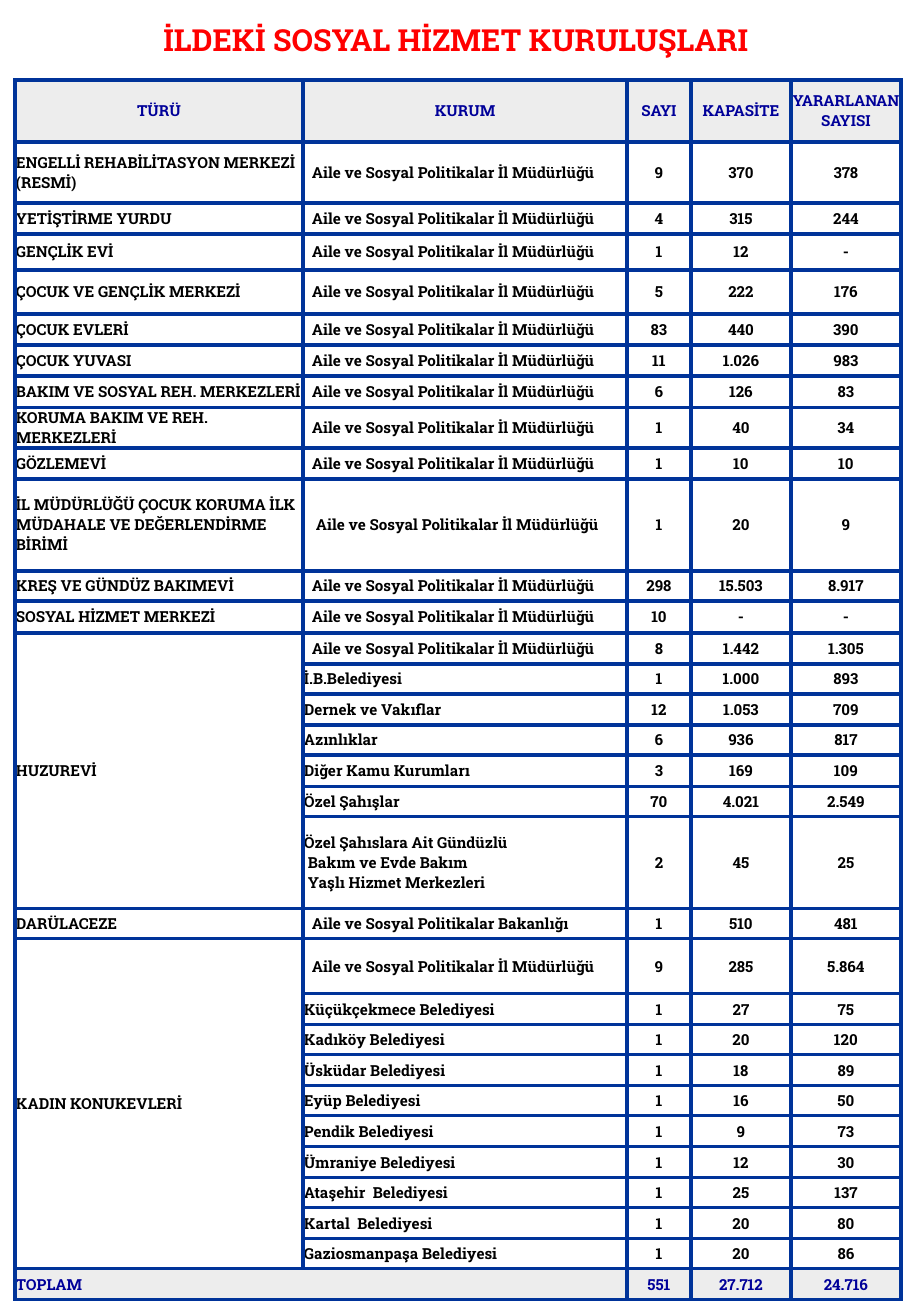
from lxml.etree import SubElement
from pptx import Presentation
from pptx.dml.color import RGBColor
from pptx.enum.text import MSO_ANCHOR, MSO_AUTO_SIZE, PP_ALIGN
from pptx.oxml.ns import qn
from pptx.util import Emu, Pt

PX = 7526  # EMU in one px
FONT = "Roboto Slab"
COLORS = {"title": "FF0000", "head": "000099", "text": "000000",
          "line": "003399", "band": "EDEDED", "paper": "FFFFFF"}
AGENCY = "Aile ve Sosyal Politikalar İl Müdürlüğü"
MINISTRY = "Aile ve Sosyal Politikalar Bakanlığı"

HEAD = ["TÜRÜ", "KURUM", "SAYI", "KAPASİTE", "YARARLANAN\nSAYISI"]
TOTAL = ["TOPLAM", "", "551", "27.712", "24.716"]
GROUPS = [
    ("ENGELLİ REHABİLİTASYON MERKEZİ (RESMİ)", [(AGENCY, "9", "370", "378")]),
    ("YETİŞTİRME YURDU", [(AGENCY, "4", "315", "244")]),
    ("GENÇLİK EVİ", [(AGENCY, "1", "12", "-")]),
    ("ÇOCUK VE GENÇLİK MERKEZİ", [(AGENCY, "5", "222", "176")]),
    ("ÇOCUK EVLERİ", [(AGENCY, "83", "440", "390")]),
    ("ÇOCUK YUVASI", [(AGENCY, "11", "1.026", "983")]),
    ("BAKIM VE SOSYAL REH. MERKEZLERİ", [(AGENCY, "6", "126", "83")]),
    ("KORUMA BAKIM VE REH. MERKEZLERİ", [(AGENCY, "1", "40", "34")]),
    ("GÖZLEMEVİ", [(AGENCY, "1", "10", "10")]),
    ("İL MÜDÜRLÜĞÜ ÇOCUK KORUMA İLK MÜDAHALE VE DEĞERLENDİRME BİRİMİ",
     [(AGENCY, "1", "20", "9")]),
    ("KREŞ VE GÜNDÜZ BAKIMEVİ", [(AGENCY, "298", "15.503", "8.917")]),
    ("SOSYAL HİZMET MERKEZİ", [(AGENCY, "10", "-", "-")]),
    ("HUZUREVİ", [
        (AGENCY, "8", "1.442", "1.305"),
        ("İ.B.Belediyesi", "1", "1.000", "893"),
        ("Dernek ve Vakıflar", "12", "1.053", "709"),
        ("Azınlıklar", "6", "936", "817"),
        ("Diğer Kamu Kurumları", "3", "169", "109"),
        ("Özel Şahışlar", "70", "4.021", "2.549"),
        ("Özel Şahıslara Ait Gündüzlü\nBakım ve Evde Bakım\nYaşlı Hizmet Merkezleri",
         "2", "45", "25")]),
    ("DARÜLACEZE", [(MINISTRY, "1", "510", "481")]),
    ("KADIN KONUKEVLERİ", [
        (AGENCY, "9", "285", "5.864"),
        ("Küçükçekmece Belediyesi", "1", "27", "75"),
        ("Kadıköy Belediyesi", "1", "20", "120"),
        ("Üsküdar Belediyesi", "1", "18", "89"),
        ("Eyüp Belediyesi", "1", "16", "50"),
        ("Pendik Belediyesi", "1", "9", "73"),
        ("Ümraniye Belediyesi", "1", "12", "30"),
        ("Ataşehir  Belediyesi", "1", "25", "137"),
        ("Kartal  Belediyesi", "1", "20", "80"),
        ("Gaziosmanpaşa Belediyesi", "1", "20", "86")]),
]
COL_WIDTHS = [288, 324, 64, 100, 110]
ROW_HEIGHTS = [62, 61, 31, 36, 44, 31, 31, 32, 40, 31, 92, 30, 32, 31, 30, 31,
               30, 32, 30, 92, 30, 55, 31, 30, 31, 30, 31, 31, 30, 31, 30, 31]


def add_text(p, text, size, color):
    for i, line in enumerate(text.split("\n")):
        if i:
            p.add_line_break()
        r = p.add_run()
        r.text = line
        r.font.name, r.font.size, r.font.bold = FONT, Pt(size), True
        r.font.color.rgb = RGBColor.from_string(COLORS[color])


def add_borders(cell):
    tcPr = cell._tc.get_or_add_tcPr()
    for i, side in enumerate(("lnL", "lnR", "lnT", "lnB")):
        ln = SubElement(tcPr, qn("a:" + side), w=str(Pt(2.25)))
        fill = SubElement(ln, qn("a:solidFill"))
        SubElement(fill, qn("a:srgbClr"), val=COLORS["line"])
        tcPr.insert(i, ln)


prs = Presentation()
prs.slide_width, prs.slide_height = Emu(911 * PX), Emu(1316 * PX)
s = prs.slides.add_slide(prs.slide_layouts[5])

# Title
title = s.shapes.title
title.left, title.top, title.width, title.height = [Emu(v * PX) for v in (15, 12, 882, 54)]
tf = title.text_frame
tf.auto_size = MSO_AUTO_SIZE.NONE
tf.vertical_anchor = MSO_ANCHOR.MIDDLE
p = tf.paragraphs[0]
p.alignment = PP_ALIGN.CENTER
add_text(p, "İLDEKİ SOSYAL HİZMET KURULUŞLARI", 18, "title")

# Table rows: the type stands only in the first row of its group
rows = [HEAD]
for kind, entries in GROUPS:
    for i, entry in enumerate(entries):
        rows.append(["" if i else kind, *entry])
rows.append(TOTAL)
last = len(rows) - 1

# Table grid
table = s.shapes.add_table(len(rows), len(HEAD), Emu(15 * PX), Emu(80 * PX),
                           Emu(sum(COL_WIDTHS) * PX), Emu(sum(ROW_HEIGHTS) * PX)).table
table.first_row = table.horz_banding = False
for col, width in zip(table.columns, COL_WIDTHS):
    col.width = Emu(width * PX)
for row, height in zip(table.rows, ROW_HEIGHTS):
    row.height = Emu(height * PX)

# Cells
for y, row in enumerate(rows):
    shaded = y in (0, last)
    for x, text in enumerate(row):
        cell = table.cell(y, x)
        cell.margin_left = cell.margin_right = Emu(PX)
        cell.margin_top = cell.margin_bottom = 0
        cell.vertical_anchor = MSO_ANCHOR.MIDDLE
        cell.fill.solid()
        cell.fill.fore_color.rgb = RGBColor.from_string(COLORS["band" if shaded else "paper"])
        add_borders(cell)
        if not text:
            continue
        p = cell.text_frame.paragraphs[0]
        p.alignment = PP_ALIGN.CENTER if y == 0 or x > 1 else PP_ALIGN.LEFT
        pPr = p._p.get_or_add_pPr()
        if text in (AGENCY, MINISTRY):
            pPr.set("marL", str((12 if "BİRİMİ" in row[0] else 8) * PX))
        elif "\n" in text and y:  # hanging indent
            pPr.set("marL", str(4 * PX))
            pPr.set("indent", str(-4 * PX))
        add_text(p, text, 9, "head" if shaded else "text")

# Merged cells
y = 1
for kind, entries in GROUPS:
    if len(entries) > 1:
        table.cell(y, 0).merge(table.cell(y + len(entries) - 1, 0))
    y += len(entries)
table.cell(last, 0).merge(table.cell(last, 1))

prs.save("out.pptx")
